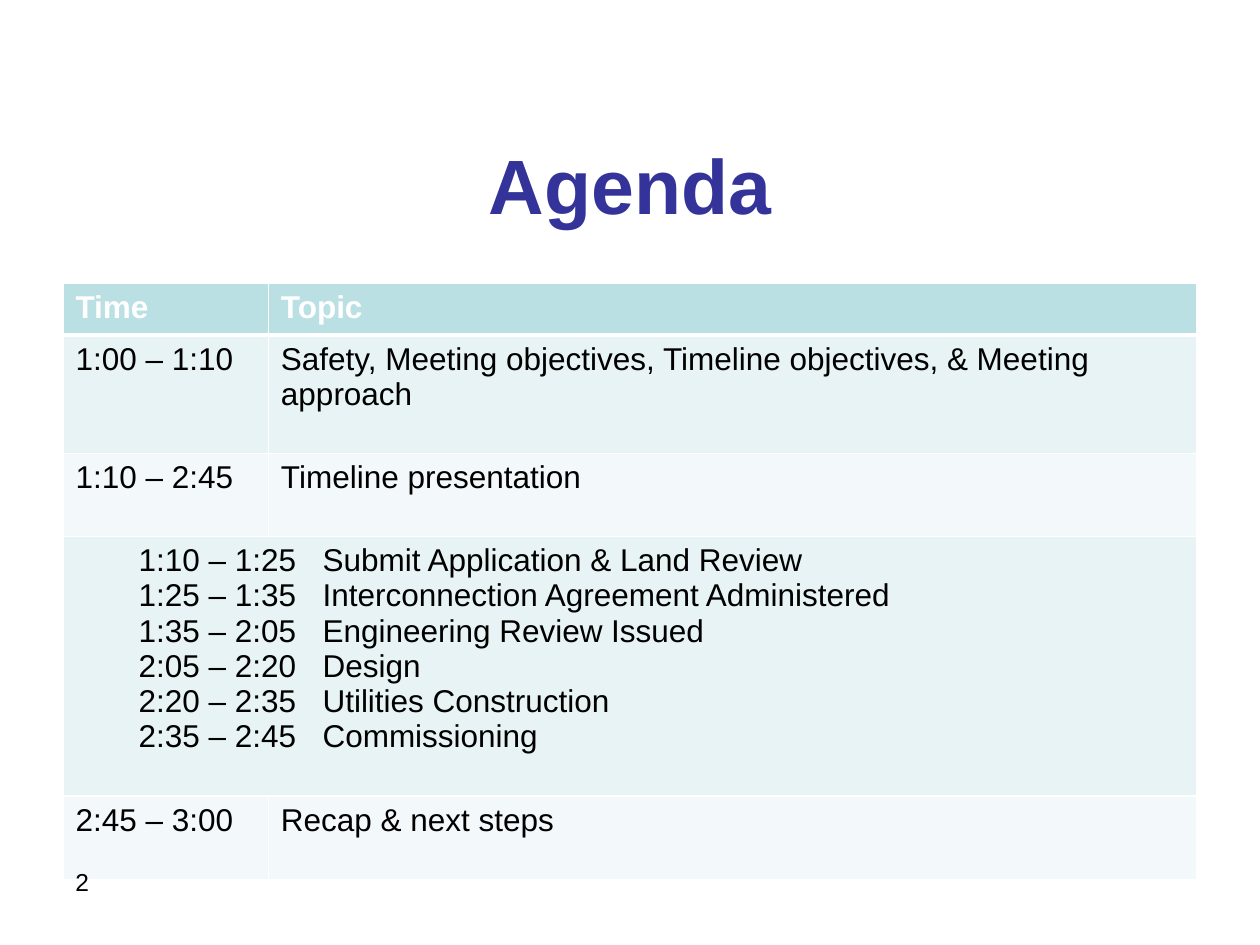
from dataclasses import dataclass

from lxml import etree
from pptx import Presentation
from pptx.dml.color import RGBColor
from pptx.enum.text import MSO_ANCHOR, PP_ALIGN
from pptx.oxml.ns import qn
from pptx.util import Inches, Pt

CENTER, LEFT = PP_ALIGN.CENTER, PP_ALIGN.LEFT
MIDDLE, TOP = MSO_ANCHOR.MIDDLE, MSO_ANCHOR.TOP


@dataclass(frozen=True)
class Theme:
    font: str = "Arial"
    title: str = "333399"
    text: str = "000000"
    white: str = "FFFFFF"
    header_fill: str = "BBE0E3"
    band_fills: tuple = ("E7F3F4", "F3F9FA")
    title_size: int = 44
    table_size: int = 18
    number_size: int = 14
    border_width: int = 1
    header_border_width: int = 3


class SlideBuilder:
    def __init__(self, slide, theme):
        self.slide = slide
        self.theme = theme

    def fill_text(self, text_frame, lines, size, color, bold=False, align=LEFT):
        """Fill a text frame with one paragraph per line."""
        formats = {"name": self.theme.font, "size": Pt(size), "bold": bold}
        for index, line in enumerate(lines):
            paragraph = text_frame.add_paragraph() if index else text_frame.paragraphs[0]
            paragraph.alignment = align
            run = paragraph.add_run()
            run.text = line
            for name, value in formats.items():
                setattr(run.font, name, value)
            run.font.color.rgb = RGBColor.from_string(color)

    def text(self, box, line, size, color, bold=False, align=LEFT, anchor=TOP):
        shape = self.slide.shapes.add_textbox(*map(Inches, box))
        shape.text_frame.word_wrap = True
        shape.text_frame.vertical_anchor = anchor
        self.fill_text(shape.text_frame, [line], size, color, bold, align)

    def border(self, cell, bottom_width):
        properties = cell._tc.get_or_add_tcPr()
        width = self.theme.border_width
        for side, points in {"L": width, "R": width, "T": width, "B": bottom_width}.items():
            line = etree.SubElement(properties, qn(f"a:ln{side}"), w=str(Pt(points)))
            fill = etree.SubElement(line, qn("a:solidFill"))
            etree.SubElement(fill, qn("a:srgbClr"), val=self.theme.white)

    def hanging(self, paragraph, first, rest):
        """Start at first; the tab leads to rest."""
        properties = paragraph._p.get_or_add_pPr()
        properties.set("marL", str(Inches(rest)))
        properties.set("indent", str(Inches(first - rest)))

    def table(self, box, widths, rows):
        """Each row is (height, cells); a single cell spans the whole row."""
        theme = self.theme
        table = self.slide.shapes.add_table(len(rows), len(widths), *map(Inches, box)).table
        for column, width in zip(table.columns, widths):
            column.width = Inches(width)
        for row_index, (height, contents) in enumerate(rows):
            header = row_index == 0
            table.rows[row_index].height = Inches(height)
            fill = theme.header_fill if header else theme.band_fills[(row_index - 1) % 2]
            bottom = theme.header_border_width if header else theme.border_width
            for column_index in range(len(widths)):
                cell = table.cell(row_index, column_index)
                self.border(cell, bottom)
                cell.fill.solid()
                cell.fill.fore_color.rgb = RGBColor.from_string(fill)
            if len(contents) == 1:
                table.cell(row_index, 0).merge(table.cell(row_index, len(widths) - 1))
            for column_index, lines in enumerate(contents):
                text_frame = table.cell(row_index, column_index).text_frame
                self.fill_text(text_frame, lines, theme.table_size,
                               theme.white if header else theme.text, header)
                if len(contents) == 1:
                    for paragraph in text_frame.paragraphs:
                        self.hanging(paragraph, 0.5, 1.96)


SESSIONS = [
    ("1:10 – 1:25", "Submit Application & Land Review"),
    ("1:25 – 1:35", "Interconnection Agreement Administered"),
    ("1:35 – 2:05", "Engineering Review Issued"),
    ("2:05 – 2:20", "Design"),
    ("2:20 – 2:35", "Utilities Construction"),
    ("2:35 – 2:45", "Commissioning"),
]
AGENDA = [
    (0.41, [["Time"], ["Topic"]]),
    (0.94, [["1:00 – 1:10"],
            ["Safety, Meeting objectives, Timeline objectives, & Meeting approach"]]),
    (0.66, [["1:10 – 2:45"], ["Timeline presentation"]]),
    (2.06, [["\t".join(session) for session in SESSIONS]]),
    (0.66, [["2:45 – 3:00"], ["Recap & next steps"]]),
]


def main():
    presentation = Presentation()
    presentation.slide_width, presentation.slide_height = Inches(10), Inches(7.5)
    theme = Theme()
    builder = SlideBuilder(presentation.slides.add_slide(presentation.slide_layouts[6]), theme)

    # Title
    builder.text((0.5, 0.92, 9, 1.08), "Agenda", theme.title_size, theme.title,
                 bold=True, align=CENTER, anchor=MIDDLE)

    # Agenda table
    table_height = sum(height for height, _ in AGENDA)
    builder.table((0.5, 2.25, 9, table_height), (1.63, 7.37), AGENDA)

    # Slide number
    builder.text((0.5, 6.83, 1.83, 0.52), "2", theme.number_size, theme.text)

    presentation.save("out.pptx")


if __name__ == "__main__":
    main()
